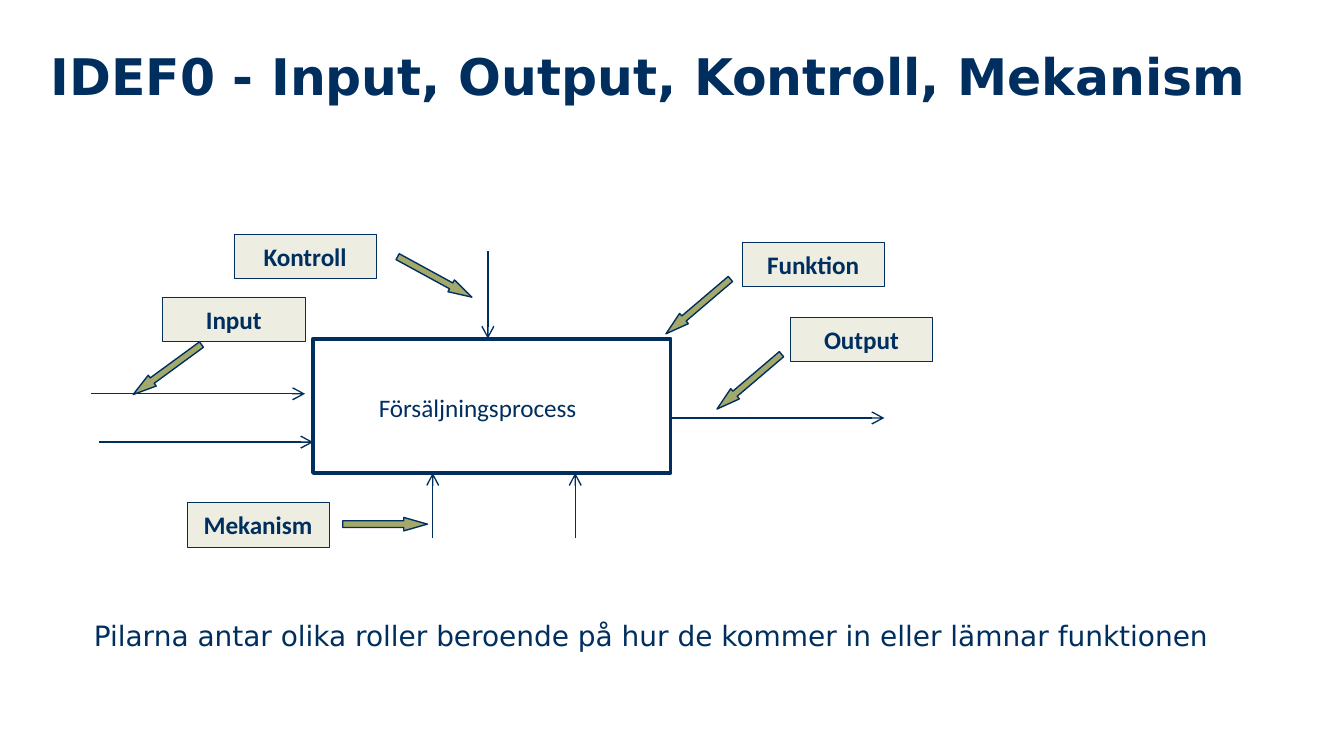
import pptx
import pptx.util
import pptx.dml.color
import pptx.enum.shapes
import pptx.enum.text
import pptx.oxml
import pptx.oxml.ns

Inches = pptx.util.Inches
Kind = pptx.enum.shapes.MSO_SHAPE
Anchor = pptx.enum.text.MSO_ANCHOR
Align = pptx.enum.text.PP_ALIGN

NAVY, PALE, OLIVE = "002F5F", "EDEEE1", "A3A86B"
TEXTS = [
    ("IDEF0 - Input, Output, Kontroll, Mekanism", (0.28, 0.29, 9.24, 0.94), 27, "DejaVu Sans", True),
    ("Försäljningsprocess", (2.72, 2.87, 1.98, 0.33), 13.5, "Calibri", False),
    ("Pilarna antar olika roller beroende på hur de kommer in eller lämnar funktionen",
     (0.6, 4.55, 8.78, 0.35), 15, "DejaVu Sans", False),
]
LEFT, TOP, WIDE, HIGH = BOX = (2.33, 2.52, 2.66, 1)
RIGHT, BASE = LEFT + WIDE, TOP + HIGH
FLOWS = [
    (0.68, 2.93, 2.27, 2.93),
    (0.74, 3.29, LEFT, 3.29),
    (RIGHT, 3.11, 6.58, 3.11),
    (3.63, 1.87, 3.63, TOP),
    (3.22, 4, 3.22, BASE),
    (4.28, 4, 4.28, BASE),
]
LABELS = [
    ("Funktion", 5.52, 1.8),
    ("Kontroll", 1.74, 1.74),
    ("Mekanism", 1.39, 3.74),
    ("Output", 5.88, 2.36),
    ("Input", 1.21, 2.21),
]
HINTS = [
    (4.88, 2.23, 319.6),
    (5.26, 2.79, 319.6),
    (2.55, 3.85, 180),
    (0.93, 2.7, 323.8),
    (2.92, 2.01, 208.6),
]


def color(code):
    return pptx.dml.color.RGBColor.from_string(code)


def write(shape, text, size, font, bold):
    shape.text_frame.word_wrap = True
    run = shape.text_frame.paragraphs[0].add_run()
    run.text = text
    run.font.size = pptx.util.Pt(size)
    run.font.name = font
    run.font.bold = bold
    run.font.color.rgb = color(NAVY)


def draw(kind, place, fill, width):
    shape = slide.shapes.add_shape(kind, *map(Inches, place))
    shape.shadow.inherit = False
    shape.fill.solid()
    shape.fill.fore_color.rgb = color(fill)
    shape.line.color.rgb = color(NAVY)
    shape.line.width = pptx.util.Pt(width)
    return shape


def flow(ends):
    line = slide.shapes.add_connector(
        pptx.enum.shapes.MSO_CONNECTOR.STRAIGHT, *map(Inches, ends))
    line.line.color.rgb = color("002E5D")
    line.line.width = pptx.util.Pt(0.75)
    tail = pptx.oxml.parse_xml(
        f'<a:tailEnd {pptx.oxml.ns.nsdecls("a")} type="arrow"/>')
    line.line._get_or_add_ln().append(tail)
    line._element.spPr.append(pptx.oxml.parse_xml(
        f'<a:effectLst {pptx.oxml.ns.nsdecls("a")}/>'))


deck = pptx.Presentation()
deck.slide_width = Inches(10)
deck.slide_height = deck.slide_width * 9 // 16
slide = deck.slides.add_slide(deck.slide_layouts[6])

draw(Kind.RECTANGLE, BOX, "FFFFFF", 2)
for ends in FLOWS:
    flow(ends)

for text, place, size, font, bold in TEXTS:
    write(slide.shapes.add_textbox(*map(Inches, place)), text, size, font, bold)

for text, x, y in LABELS:
    label = draw(Kind.RECTANGLE, (x, y, 1.06, 0.33), PALE, 0.25)
    label.text_frame.vertical_anchor = Anchor.MIDDLE
    label.text_frame.paragraphs[0].alignment = Align.CENTER
    write(label, text, 13.5, "Calibri", True)

for x, y, turn in HINTS:
    hint = draw(Kind.LEFT_ARROW, (x, y, 0.63, 0.1), OLIVE, 0.75)
    hint.adjustments[0] = 0.5
    hint.adjustments[1] = 1.76
    hint.rotation = turn

deck.save("out.pptx")
